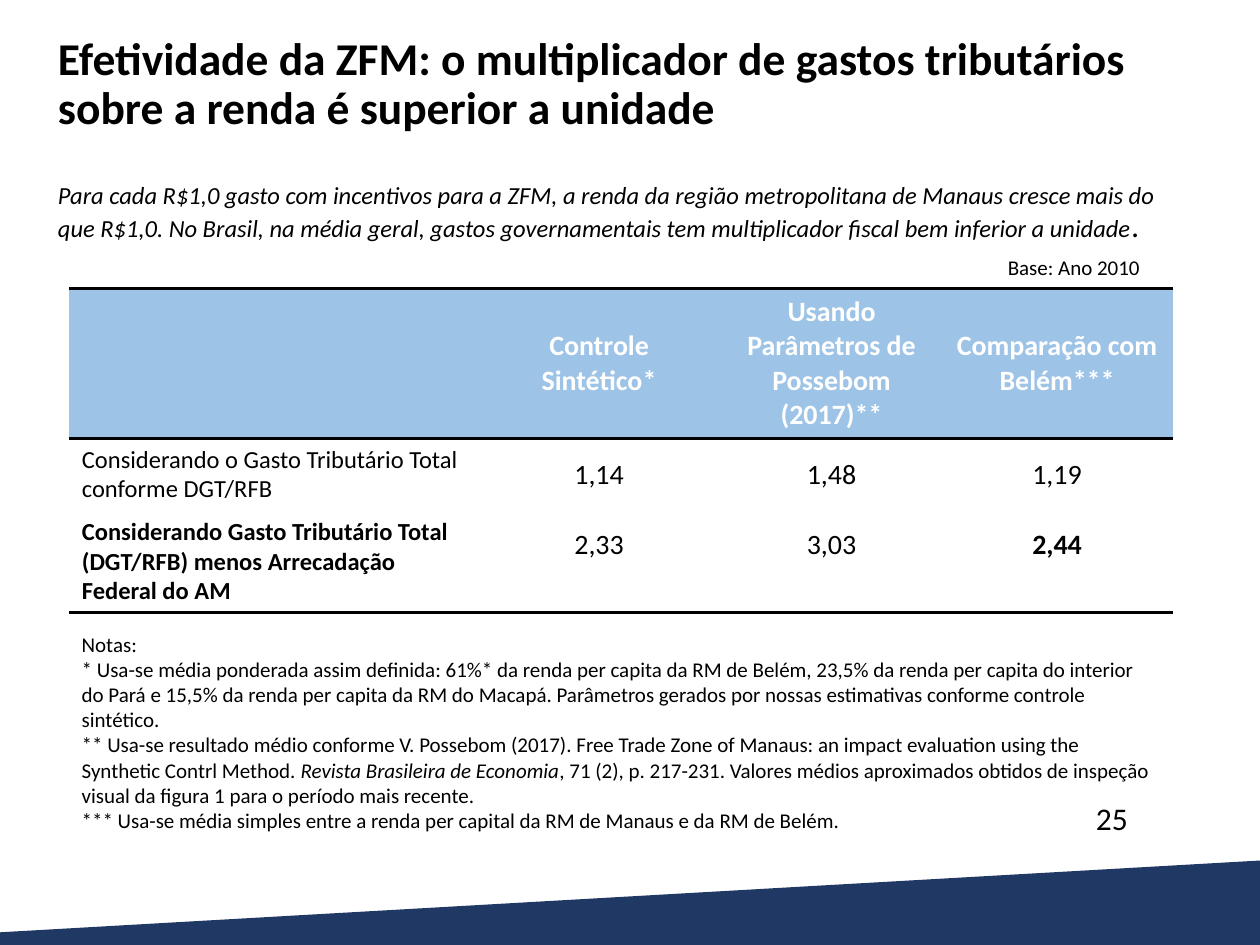
from lxml import etree
from pptx import Presentation
from pptx.dml.color import RGBColor
from pptx.enum.text import MSO_ANCHOR, MSO_AUTO_SIZE, PP_ALIGN
from pptx.oxml.ns import qn
from pptx.util import Inches, Pt

TOP, MID = MSO_ANCHOR.TOP, MSO_ANCHOR.MIDDLE
LEFT, CENTER = PP_ALIGN.LEFT, PP_ALIGN.CENTER
FIXED = MSO_AUTO_SIZE.NONE
FONT, BLACK, WHITE, BLUE, NAVY = "Calibri", "000000", "FFFFFF", "9DC3E6", "203864"

HEAD = "Efetividade da ZFM: o multiplicador de gastos tributários sobre a renda é superior a unidade"
LEAD = ("Para cada R$1,0 gasto com incentivos para a ZFM, a renda da região metropolitana de Manaus "
        "cresce mais do que R$1,0. No Brasil, na média geral, gastos governamentais tem multiplicador "
        "fiscal bem inferior a unidade")
ROWS = [
    ["", "Controle Sintético*", "Usando Parâmetros de Possebom (2017)**", "Comparação com Belém***"],
    ["Considerando o Gasto Tributário Total conforme DGT/RFB", "1,14", "1,48", "1,19"],
    ["Considerando Gasto Tributário Total (DGT/RFB) menos Arrecadação Federal do AM",
     "2,33", "3,03", "2,44"],
]
BOLD = {(0, 1), (0, 2), (0, 3), (2, 0), (2, 3)}
FILLS = [BLUE, None, WHITE]
RULES = [("T", "B"), ("T",), ("B",)]
COLS = [3.23, 1.95, 1.74, 1.84]
HIGH = [1.19, 0.57, 0.81]
NOTES = [
    ["Notas:"],
    ["* Usa-se média ponderada assim definida: 61%* da renda per capita da RM de Belém, 23,5% da "
     "renda per capita do interior do Pará e 15,5% da renda per capita da RM do Macapá. Parâmetros "
     "gerados por nossas estimativas conforme controle sintético."],
    ["** Usa-se resultado médio conforme V. Possebom (2017). Free Trade Zone of Manaus: an impact "
     "evaluation using the Synthetic Contrl Method. ", "Revista Brasileira de Economia",
     ", 71 (2), p. 217-231. Valores médios aproximados obtidos de inspeção visual da figura 1 para "
     "o período mais recente."],
    ["*** Usa-se média simples entre a renda per capital da RM de Manaus e da RM de Belém."],
]
BOXES = [
    ((0.55, 4.96, 8.76, 1.72), 12, NOTES),
    ((7.9, 1.97, 1.54, 0.3), 12, [["Base: Ano 2010"]]),
    ((8.6, 6.29, 0.96, 0.4), 18, [["25"]]),
]
BAND = [(0, 7.4), (10, 6.83), (10, 7.5), (0, 7.5)]


def color(code):
    return RGBColor.from_string(code)


def style(font, size, code=BLACK, bold=False, italic=False):
    font.name, font.size, font.bold, font.italic = FONT, Pt(size), bold, italic
    font.color.rgb = color(code)


def place(shape, area):
    shape.left, shape.top, shape.width, shape.height = map(Inches, area)


def border(cell, sides):
    props = cell._tc.get_or_add_tcPr()
    for side in "LRTB":
        line = etree.SubElement(props, qn(f"a:ln{side}"))
        if side in sides:
            line.set("w", str(Pt(2)))
            fill = etree.SubElement(line, qn("a:solidFill"))
            etree.SubElement(fill, qn("a:srgbClr"), val=BLACK)
        else:
            etree.SubElement(line, qn("a:noFill"))


def add_band(slide):
    first, *rest = [(Inches(x), Inches(y)) for x, y in BAND]
    build = slide.shapes.build_freeform(*first)
    build.add_line_segments(rest)
    band = build.convert_to_shape()
    band.shadow.inherit = False
    band.fill.solid()
    band.fill.fore_color.rgb = color(NAVY)
    band.line.fill.background()


def add_title(slide):
    title = slide.shapes.title
    place(title, (0.36, 0.24, 9.2, 1.91))
    frame = title.text_frame
    frame.auto_size, frame.vertical_anchor, frame.word_wrap = FIXED, TOP, True
    frame.text = HEAD
    style(frame.paragraphs[0].runs[0].font, 26, bold=True)
    lead = frame.add_paragraph()
    for text, size in ((LEAD, 14), (".", 18)):
        run = lead.add_run()
        run.text = text
        style(run.font, size, italic=True)
    for para, gap in zip(frame.paragraphs, (0, 28)):
        para.alignment, para.line_spacing, para.space_before = LEFT, 0.9, Pt(gap)


def add_grid(slide):
    area = map(Inches, (0.55, 2.29, sum(COLS), sum(HIGH)))
    table = slide.shapes.add_table(len(ROWS), len(COLS), *area).table
    table.first_row = table.horz_banding = False
    for col, width in zip(table.columns, COLS):
        col.width = Inches(width)
    for r, row in enumerate(ROWS):
        table.rows[r].height = Inches(HIGH[r])
        for c, text in enumerate(row):
            cell = table.cell(r, c)
            cell.text = text
            border(cell, RULES[r])
            if FILLS[r]:
                cell.fill.solid()
                cell.fill.fore_color.rgb = color(FILLS[r])
            else:
                cell.fill.background()
            cell.vertical_anchor = MID if c else TOP
            if r == 2 and c:
                cell.margin_bottom = Inches(0.32)
            para = cell.text_frame.paragraphs[0]
            para.alignment = CENTER if c else LEFT
            style(para.font, 16 if c else 14, BLACK if r else WHITE, (r, c) in BOLD)
            for run in para.runs:
                style(run.font, 16 if c else 14, BLACK if r else WHITE, (r, c) in BOLD)


def add_box(slide, area, size, paras):
    frame = slide.shapes.add_textbox(*map(Inches, area)).text_frame
    frame.word_wrap = True
    for i, parts in enumerate(paras):
        para = frame.add_paragraph() if i else frame.paragraphs[0]
        for j, text in enumerate(parts):
            run = para.add_run()
            run.text = text
            style(run.font, size, italic=j == 1)


def main():
    deck = Presentation()
    deck.slide_width, deck.slide_height = Inches(10), Inches(7.5)
    slide = deck.slides.add_slide(deck.slide_layouts[5])
    add_band(slide)
    add_title(slide)
    add_grid(slide)
    for box in BOXES:
        add_box(slide, *box)
    deck.save("out.pptx")


if __name__ == "__main__":
    main()
